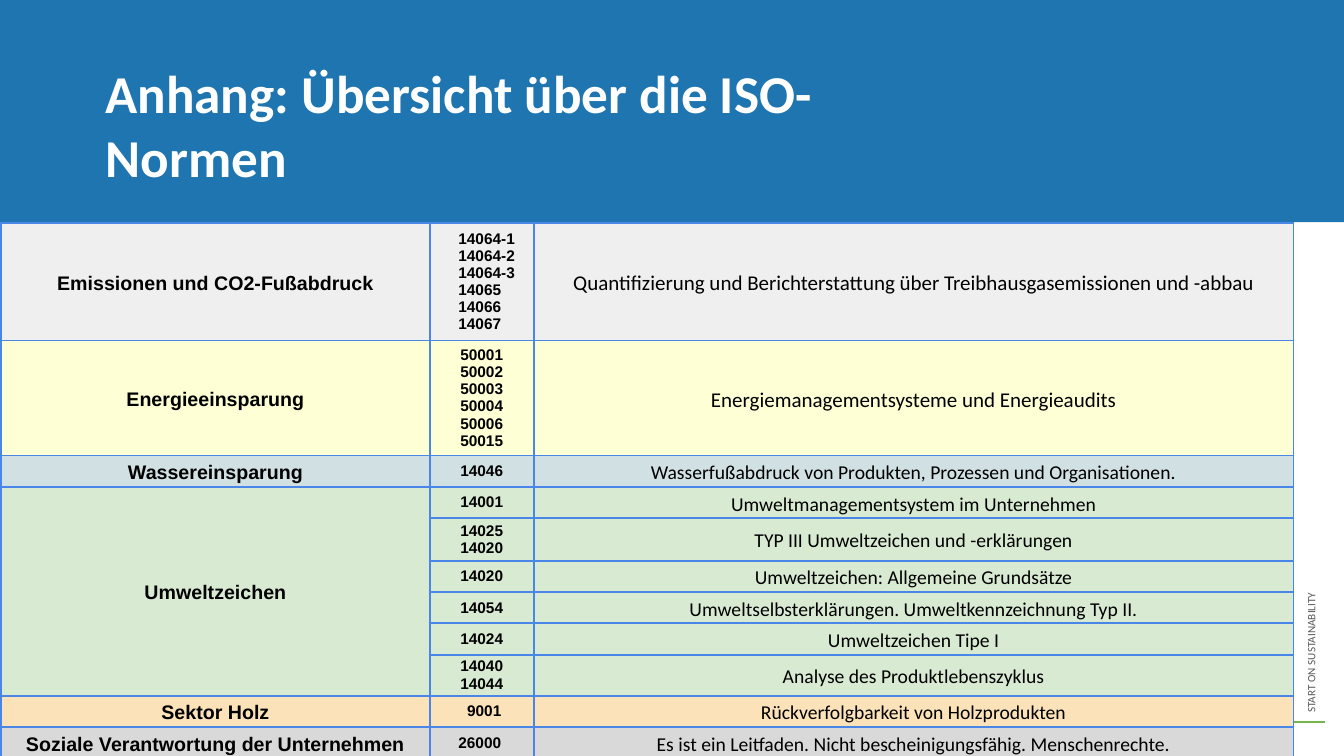
"""Build the slide with the overview of ISO standards."""
from dataclasses import dataclass

from lxml import etree
from pptx import Presentation
from pptx.dml.color import RGBColor
from pptx.enum.shapes import MSO_CONNECTOR, MSO_SHAPE
from pptx.enum.text import MSO_ANCHOR, PP_ALIGN
from pptx.oxml.ns import qn
from pptx.slide import Slide
from pptx.table import _Cell
from pptx.text.text import TextFrame
from pptx.util import Cm, Pt

LEFT, CENTER = PP_ALIGN.LEFT, PP_ALIGN.CENTER
MIDDLE = MSO_ANCHOR.MIDDLE
RECT = MSO_SHAPE.RECTANGLE
LINE = MSO_CONNECTOR.STRAIGHT

WHITE = RGBColor(0xFF, 0xFF, 0xFF)
BLACK = RGBColor(0x00, 0x00, 0x00)
GREY = RGBColor(0x59, 0x59, 0x59)
BLUE = RGBColor(0x1E, 0x75, 0xB0)
LIME = RGBColor(0x73, 0xB6, 0x4B)
EDGE = RGBColor(0x4A, 0x86, 0xE8)
PALE = RGBColor(0xEF, 0xEF, 0xEF)
CREAM = RGBColor(0xFE, 0xFF, 0xD4)
AQUA = RGBColor(0xD0, 0xE0, 0xE3)
GREEN = RGBColor(0xD9, 0xEA, 0xD3)
SAND = RGBColor(0xFC, 0xE2, 0xB8)
SILVER = RGBColor(0xD9, 0xD9, 0xD9)

WIDTHS = (10.8, 2.62, 19.15)
SIDES = ("a:lnL", "a:lnR", "a:lnT", "a:lnB")


@dataclass
class Norm:
    """One standard or set of standards."""
    codes: str
    text: str
    high: float = 0.79
    size: int = 14
    indent: float = 0


@dataclass
class Group:
    """A topic with its norms."""
    name: str
    fill: RGBColor
    norms: tuple[Norm, ...]


GROUPS = (
    Group("Emissionen und CO2-Fußabdruck", PALE, (
        Norm("14064-1\n14064-2\n14064-3\n14065\n14066\n14067",
             "Quantifizierung und Berichterstattung über "
             "Treibhausgasemissionen und -abbau", 2.97, 15, 0.72),)),
    Group("Energieeinsparung", CREAM, (
        Norm("50001\n50002\n50003\n50004\n50006\n50015",
             "Energiemanagementsysteme und Energieaudits", 2.79, 15),)),
    Group("Wassereinsparung", AQUA, (
        Norm("14046", "Wasserfußabdruck von Produkten, Prozessen "
             "und Organisationen."),)),
    Group("Umweltzeichen", GREEN, (
        Norm("14001", "Umweltmanagementsystem im Unternehmen"),
        Norm("14025\n14020", "TYP III Umweltzeichen und -erklärungen", 1.07),
        Norm("14020", "Umweltzeichen: Allgemeine Grundsätze"),
        Norm("14054", "Umweltselbsterklärungen. Umweltkennzeichnung Typ II."),
        Norm("14024", "Umweltzeichen Tipe I"),
        Norm("14040\n14044", "Analyse des Produktlebenszyklus", 0.97))),
    Group("Sektor Holz", SAND, (
        Norm("9001", "Rückverfolgbarkeit von Holzprodukten", indent=0.94),)),
    Group("Soziale Verantwortung der Unternehmen", SILVER, (
        Norm("26000", "Es ist ein Leitfaden. Nicht bescheinigungsfähig. "
             "Menschenrechte.", indent=0.72),)),
)


def write(frame: TextFrame, text: str, size: int, color: RGBColor,
          font: str = "Calibri", bold: bool = False,
          align: PP_ALIGN = LEFT, space: float = 1.0) -> None:
    """Fill a frame with text in one style."""
    frame.text = text
    frame.word_wrap = True
    for para in frame.paragraphs:
        para.alignment = align
        para.line_spacing = space
        for run in para.runs:
            run.font.size = Pt(size)
            run.font.name = font
            run.font.bold = bold
            run.font.color.rgb = color


def dress(cell: _Cell, fill: RGBColor) -> None:
    """Set fill, margins and borders of a cell."""
    cell.margin_left = cell.margin_right = Cm(0.08)
    cell.margin_top = cell.margin_bottom = Cm(0.05)
    cell.vertical_anchor = MIDDLE
    props = cell._tc.get_or_add_tcPr()
    for side in SIDES:
        edge = etree.SubElement(props, qn(side), w=str(Pt(1.5)))
        solid = etree.SubElement(edge, qn("a:solidFill"))
        etree.SubElement(solid, qn("a:srgbClr"), val=str(EDGE))
    cell.fill.solid()
    cell.fill.fore_color.rgb = fill


def draw_side(slide: Slide) -> None:
    """Draw the upright label and its line."""
    box = slide.shapes.add_textbox(Cm(27.38), Cm(12.24), Cm(11.33), Cm(0.61))
    box.rotation = 270
    write(box.text_frame, "START ON SUSTAINABILITY", 8, GREY)
    line = slide.shapes.add_connector(LINE, Cm(32.51), Cm(18.19),
                                      Cm(33.4), Cm(18.19))
    line.line.color.rgb = LIME
    line.line.width = Pt(1)
    etree.SubElement(line._element.spPr, qn("a:effectLst"))


def draw_head(slide: Slide) -> None:
    """Draw the band and the title."""
    band = slide.shapes.add_shape(RECT, 0, 0, Cm(33.87), Cm(5.6))
    band.shadow.inherit = False
    band.fill.solid()
    band.fill.fore_color.rgb = BLUE
    band.line.fill.background()
    box = slide.shapes.add_textbox(Cm(2.41), Cm(1.4), Cm(18.95), Cm(2.92))
    write(box.text_frame, "Anhang: Übersicht über die ISO-Normen",
          38, WHITE, bold=True)


def draw_table(slide: Slide) -> None:
    """Draw the table of all groups."""
    norms = [norm for group in GROUPS for norm in group.norms]
    high = sum(norm.high for norm in norms)
    table = slide.shapes.add_table(len(norms), len(WIDTHS), Cm(0.03), Cm(5.61),
                                   Cm(sum(WIDTHS)), Cm(high)).table
    table.first_row = table.horz_banding = False
    for col, wide in zip(table.columns, WIDTHS):
        col.width = Cm(wide)
    row = 0
    for group in GROUPS:
        start = row
        for norm in group.norms:
            table.rows[row].height = Cm(norm.high)
            name, code, text = table.rows[row].cells
            for cell in (name, code, text):
                dress(cell, group.fill)
            if norm.indent:
                code.margin_left = Cm(norm.indent)
            write(code.text_frame, norm.codes, 11, BLACK, "Arial", True,
                  LEFT if norm.indent else CENTER)
            write(text.text_frame, norm.text, norm.size, BLACK,
                  align=CENTER, space=1.15)
            row += 1
        first = table.cell(start, 0)
        if row - start > 1:
            first.merge(table.cell(row - 1, 0))
        write(first.text_frame, group.name, 14, BLACK, "Arial", True,
              CENTER, 1.15)


def main() -> None:
    """Build and save the slide."""
    deck = Presentation()
    deck.slide_width, deck.slide_height = Cm(33.87), Cm(19.05)
    slide = deck.slides.add_slide(deck.slide_layouts[6])
    draw_side(slide)
    draw_head(slide)
    draw_table(slide)
    deck.save("out.pptx")


if __name__ == "__main__":
    main()
